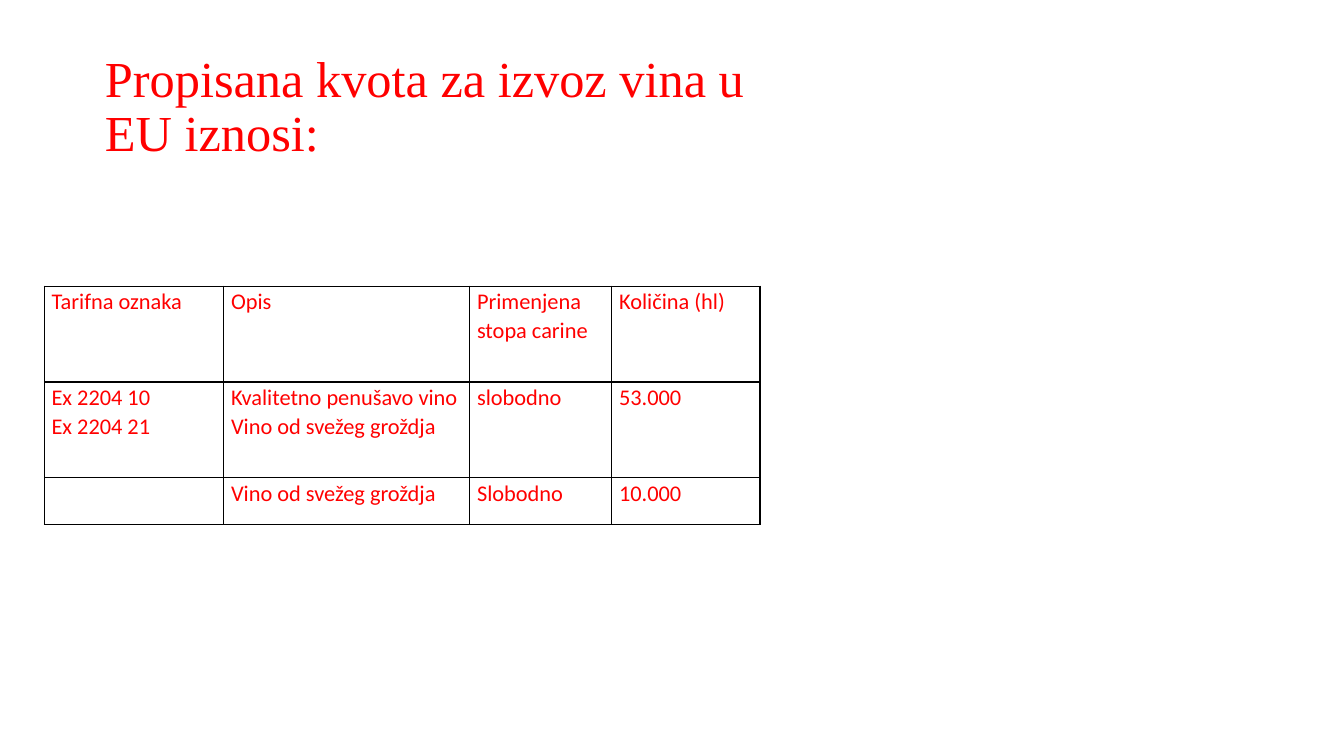
from lxml.etree import SubElement
from pptx import Presentation
from pptx.dml.color import RGBColor
from pptx.enum.text import MSO_ANCHOR, PP_ALIGN
from pptx.oxml.ns import qn
from pptx.util import Pt

COLORS = {"text": "FF0000", "border": "000000"}

COLUMN_WIDTHS = [128.2, 175.7, 101.5, 105.8]
ROW_HEIGHTS = [68.4, 68.4, 33.1]
QUOTAS = [
    ["Tarifna oznaka", "Opis", "Primenjena stopa carine", "Količina (hl)"],
    ["Ex 2204 10\nEx 2204 21", "Kvalitetno penušavo vino\nVino od svežeg groždja",
     "slobodno", "53.000"],
    ["", "Vino od svežeg groždja", "Slobodno", "10.000"],
]


def format_text(frame, font_name, size, line_spacing):
    for para in frame.paragraphs:
        para.alignment = PP_ALIGN.LEFT
        para.line_spacing = line_spacing
        para.font.size = Pt(size)
        for span in para.runs:
            span.font.name = font_name
            span.font.size = Pt(size)
            span.font.bold = False
            span.font.color.rgb = RGBColor.from_string(COLORS["text"])


def add_borders(cell, width):
    properties = cell._tc.get_or_add_tcPr()
    for side in ("lnL", "lnR", "lnT", "lnB"):
        line = SubElement(properties, qn(f"a:{side}"), w=str(Pt(width)))
        fill = SubElement(line, qn("a:solidFill"))
        SubElement(fill, qn("a:srgbClr"), val=COLORS["border"])


def set_title(page, text):
    title = page.shapes.title
    title.left, title.top = Pt(67.7), Pt(25.2)
    title.width, title.height = Pt(501.1), Pt(104.4)
    frame = title.text_frame
    frame.text = text
    frame.word_wrap = True
    frame.vertical_anchor = MSO_ANCHOR.MIDDLE
    format_text(frame, "Times New Roman", 36, 0.9)


def fill_cell(cell, text):
    cell.text_frame.text = text
    cell.margin_left = cell.margin_right = Pt(5.2)
    cell.margin_top = cell.margin_bottom = Pt(0)
    cell.vertical_anchor = MSO_ANCHOR.TOP
    add_borders(cell, 1)
    cell.fill.background()
    format_text(cell.text_frame, "Calibri", 16, 1.07)


def add_quota_table(page, left, top):
    frame = page.shapes.add_table(
        len(ROW_HEIGHTS), len(COLUMN_WIDTHS), Pt(left), Pt(top),
        Pt(sum(COLUMN_WIDTHS)), Pt(sum(ROW_HEIGHTS)))
    table = frame.table
    table.first_row = table.horz_banding = False
    for column, width in zip(table.columns, COLUMN_WIDTHS):
        column.width = Pt(width)
    for row, height, texts in zip(table.rows, ROW_HEIGHTS, QUOTAS):
        row.height = Pt(height)
        for cell, text in zip(row.cells, texts):
            fill_cell(cell, text)


def main():
    deck = Presentation()
    deck.slide_width, deck.slide_height = Pt(960), Pt(540)
    page = deck.slides.add_slide(deck.slide_layouts[5])

    # Heading
    set_title(page, "Propisana kvota za izvoz vina u EU iznosi:")

    # Export quotas
    add_quota_table(page, 31.7, 204.5)

    deck.save("out.pptx")


if __name__ == "__main__":
    main()
